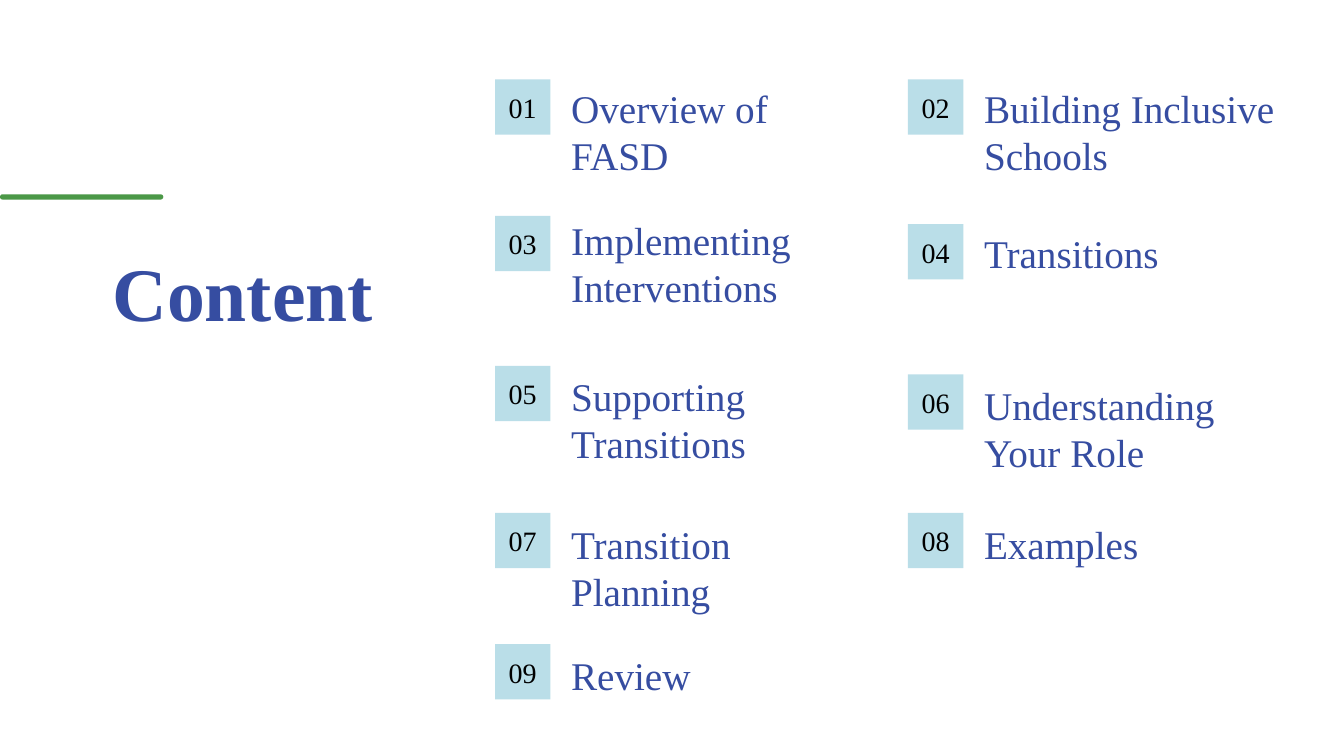
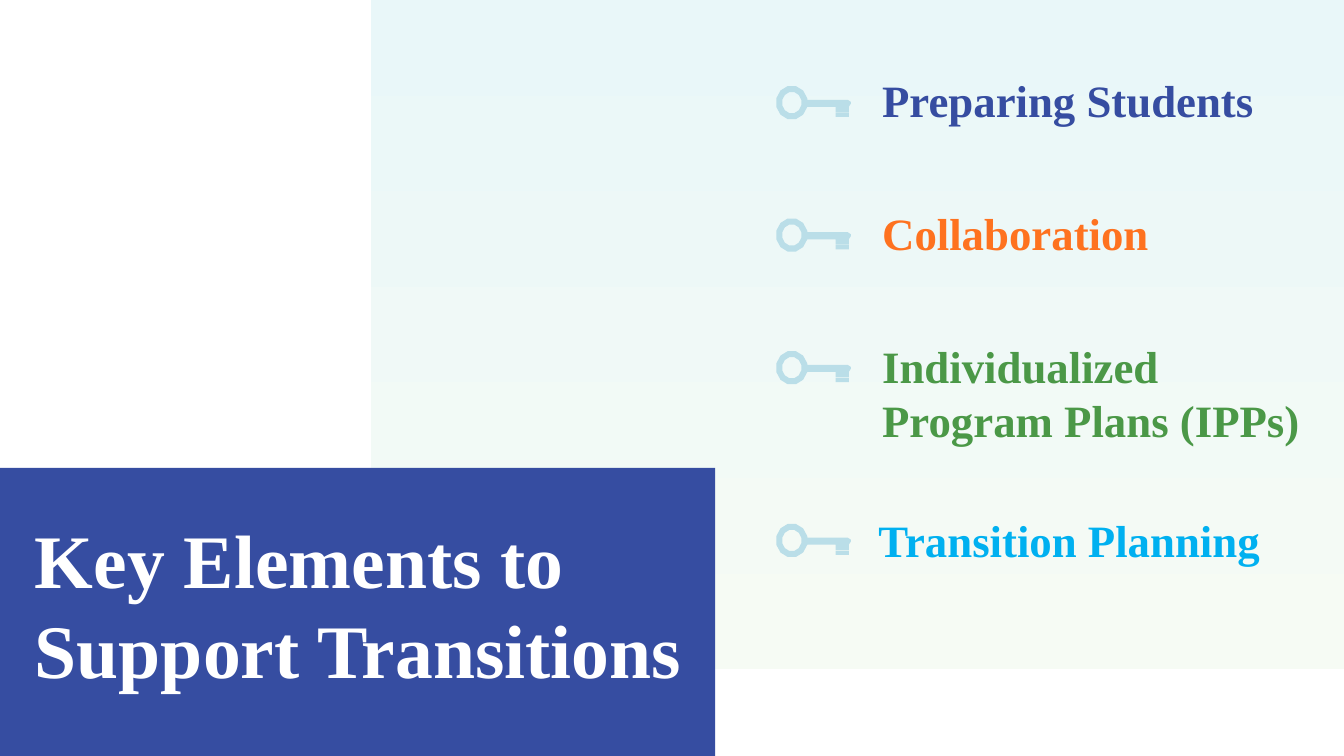
import math

from pptx import Presentation, util as u
from pptx.dml import color as dml_color
from pptx.enum import shapes, text

FONT = "Times New Roman"
BLUE, GREEN, PALE, WHITE, BLACK = "364DA1", "4B9847", "BADEE8", "FFFFFF", "000000"
ORANGE, SKY = "FE721F", "00B0F0"
TITLE = dict(size=54, bold=True)
ITEM = dict(size=28, color=BLUE)
KEY_POINT = dict(size=32, bold=True)

presentation = Presentation()
presentation.slide_width = u.Inches(13.333)
presentation.slide_height = u.Inches(7.5)
column = presentation.slide_width / 100
row = presentation.slide_height / 100
blank = presentation.slide_layouts[6]


def paint(color_format, shade):
    color_format.rgb = dml_color.RGBColor.from_string(shade)


def add_box(slide, left, top, width, height, words="", size=20, color=BLACK,
            bold=False, fill=None, preset=shapes.MSO_SHAPE.RECTANGLE):
    place = [round(v) for v in (left * column, top * row, width * column, height * row)]
    if fill:
        shape = slide.shapes.add_shape(preset, *place)
        shape.shadow.inherit = False
        shape.line.fill.background()
        shape.fill.solid()
        paint(shape.fill.fore_color, fill)
    else:
        shape = slide.shapes.add_textbox(*place)
    if words:
        frame = shape.text_frame
        frame.word_wrap = True
        paragraph = frame.paragraphs[0]
        if fill:
            frame.vertical_anchor = text.MSO_ANCHOR.MIDDLE
            paragraph.alignment = text.PP_ALIGN.CENTER
        else:
            frame.auto_size = text.MSO_AUTO_SIZE.SHAPE_TO_FIT_TEXT
        run = paragraph.add_run()
        run.text = words
        run.font.name = FONT
        run.font.size = u.Pt(size)
        run.font.bold = bold
        paint(run.font.color, color)
    return shape


contents = presentation.slides.add_slide(blank)
add_box(contents, 7.63, 31.87, 26.85, 13.47, "Content", color=BLUE, **TITLE)
rule = add_box(contents, 0, 25.7, 12.15, 0.7, fill=GREEN,
               preset=shapes.MSO_SHAPE.ROUNDED_RECTANGLE)
rule.adjustments[0] = 0.5

badge_columns = [36.83, 67.55]
badge_width, badge_height, text_offset = 4.13, 7.33, 4.93
one_line, two_lines = 7.6, 13.87
items = [
    ("Overview of FASD", 10.5, 10.53, 19.65, two_lines),
    ("Building Inclusive Schools", 10.5, 10.53, 23.63, two_lines),
    ("Implementing Interventions", 28.55, 28, 21.08, two_lines),
    ("Transitions", 29.65, 29.65, 23.63, one_line),
    ("Supporting Transitions", 48.4, 48.53, 17.93, two_lines),
    ("Understanding Your Role", 49.52, 49.82, 23.63, two_lines),
    ("Transition Planning", 67.83, 68.13, 22.43, two_lines),
    ("Examples", 67.83, 68.13, 23.63, one_line),
    ("Review", 85.2, 85.55, 22.43, one_line),
]
for index, (words, badge_top, text_top, width, height) in enumerate(items):
    left = badge_columns[index % 2]
    add_box(contents, left, badge_top, badge_width, badge_height,
            f"{index + 1:02}", fill=PALE)
    add_box(contents, left + text_offset, text_top, width, height, words, **ITEM)

elements = presentation.slides.add_slide(blank)
panel = add_box(elements, 27.6, 0, 72.4, 88.53, fill=WHITE)
panel.fill.gradient()
panel.fill.gradient_angle = 270
for stop, shade in zip(panel.fill.gradient_stops, ("E9F7F9", "F6FBF4")):
    paint(stop.color, shade)
add_box(elements, 0, 61.9, 53.22, 38.1, fill=BLUE)
add_box(elements, 1.86, 67.13, 51.38, 25.6, "Key Elements to Support Transitions",
        color=WHITE, **TITLE)

bow_outer, bow_hole = [
    [(155 + rx * math.cos(math.radians(a)), 168 + ry * math.sin(math.radians(a)))
     for a in range(15, 360, 30)]
    for rx, ry in ((158, 170), (97, 108))
]
shaft = [(310, 140), (710, 140), (740, 160), (740, 180), (720, 210),
         (720, 262), (590, 262), (590, 210), (310, 210)]
bit = [(590, 268), (720, 268), (720, 310), (590, 310)]
key_contours = [bow_outer + shaft, bow_hole, bit]

key_points = [
    ("Preparing Students", BLUE, 64.9, 9, 31.88, 8.53, 11.33),
    ("Collaboration", ORANGE, 64.9, 26.53, 28.05, 8.53, 28.85),
    ("Individualized Program Plans (IPPs)", GREEN, 64.9, 44.13, 33, 15.73, 46.4),
    ("Transition Planning", SKY, 64.63, 67.2, 32.18, 8.53, 69.25),
]
for words, color, left, top, width, height, key_top in key_points:
    add_box(elements, left, top, width, height, words, color=color, **KEY_POINT)
    builder = elements.shapes.build_freeform(*key_contours[0][0], scale=u.Inches(1) / 1000)
    for number, contour in enumerate(key_contours):
        if number:
            builder.move_to(*contour[0])
        builder.add_line_segments(contour[1:], close=True)
    key = builder.convert_to_shape(round(57.75 * column), round(key_top * row))
    key.shadow.inherit = False
    key.line.fill.background()
    key.fill.solid()
    paint(key.fill.fore_color, PALE)

presentation.save("out.pptx")
